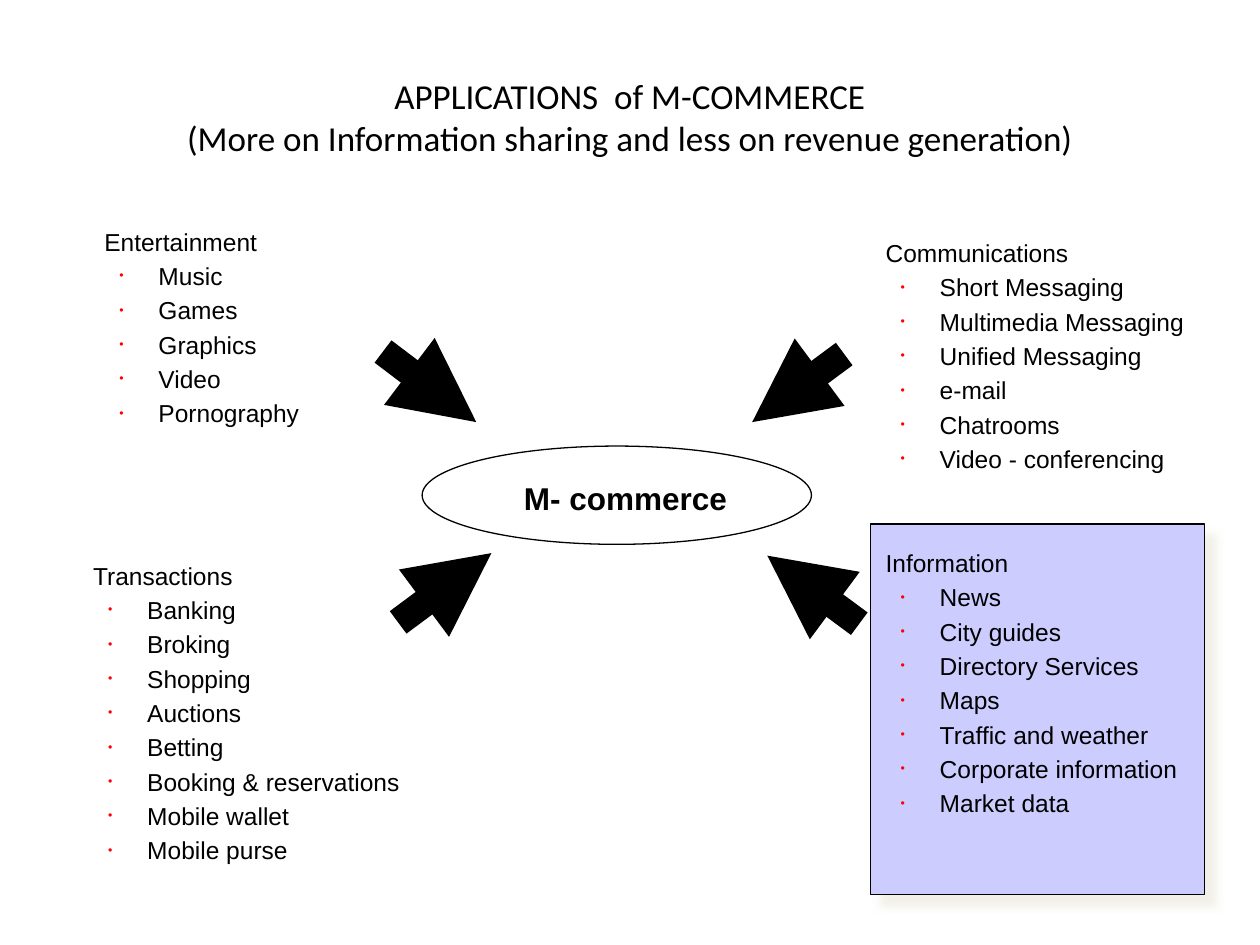
from lxml.etree import SubElement
from pptx import Presentation
from pptx.dml.color import RGBColor
from pptx.enum.shapes import MSO_CONNECTOR as Line, MSO_SHAPE as Shape
from pptx.enum.text import MSO_ANCHOR as Anchor, PP_ALIGN as Align
from pptx.oxml.ns import qn
from pptx.util import Inches, Pt

BLACK = RGBColor(0x00, 0x00, 0x00)
RED = RGBColor(0xFF, 0x00, 0x00)
LILAC = RGBColor(0xCC, 0xCC, 0xFF)
CREAM = RGBColor(0xEE, 0xEC, 0xE1)

TITLE = "APPLICATIONS  of M-COMMERCE\v(More on Information sharing and less on revenue generation)"
LISTS = [
    (0.35, 1.75, 2.56, "Entertainment",
     ["Music", "Games", "Graphics", "Video", "Pornography"]),
    (6.55, 1.84, 3.45, "Communications",
     ["Short Messaging", "Multimedia Messaging", "Unified Messaging",
      "e-mail", "Chatrooms", "Video - conferencing"]),
    (0.26, 4.4, 3.11, "Transactions",
     ["Banking", "Broking", "Shopping", "Auctions", "Betting",
      "Booking & reservations", "Mobile wallet", "Mobile purse"]),
    (6.55, 4.3, 3.45, "Information",
     ["News", "City guides", "Directory Services", "Maps",
      "Traffic and weather", "Corporate information", "Market data"]),
]
ARROWS = [
    (3.04, 2.79, 3.78, 3.35),
    (6.7, 2.81, 5.97, 3.35),
    (3.16, 4.94, 3.9, 4.39),
    (6.82, 4.95, 6.09, 4.41),
]


def add_node(parent, tag, **attrs):
    """Append a DrawingML element and return it."""
    return SubElement(parent, qn(f"a:{tag}"), {k: str(v) for k, v in attrs.items()})


def set_font(para, size, name="Arial", bold=False):
    """Give a paragraph its black font."""
    font = para.font
    font.size, font.name, font.bold = Pt(size), name, bold
    font.color.rgb = BLACK


def add_title(slide):
    """Fill and place the title."""
    title = slide.shapes.title
    title.left, title.top = Inches(0.5), Inches(0.3)
    title.width, title.height = Inches(9), Inches(1.25)
    frame = title.text_frame
    frame.vertical_anchor = Anchor.MIDDLE
    para = frame.paragraphs[0]
    para.text = TITLE
    para.alignment = Align.CENTER
    set_font(para, 20, "Calibri")


def add_form(shapes, kind, *box):
    """Add an unfilled shape with a thin black outline."""
    form = shapes.add_shape(kind, *map(Inches, box))
    form.shadow.inherit = False
    form.fill.background()
    form.line.color.rgb = BLACK
    form.line.width = Pt(0.75)
    return form


def add_panel(slide):
    """Add the lilac panel with its soft shadow."""
    panel = add_form(slide.shapes, Shape.RECTANGLE, 6.91, 4.16, 2.65, 2.94)
    panel.fill.solid()
    panel.fill.fore_color.rgb = LILAC
    effects = panel._element.spPr.find(qn("a:effectLst"))
    shade = add_node(effects, "outerShdw", blurRad=Pt(5), dist=Pt(8.5),
                     dir=45 * 60000, algn="ctr", rotWithShape=0)
    add_node(add_node(shade, "srgbClr", val=CREAM), "alpha", val=75000)


def add_arrow(shapes, *ends):
    """Add a thick arrow from the first point to the second."""
    arrow = shapes.add_connector(Line.STRAIGHT, *map(Inches, ends))
    arrow.line.color.rgb = BLACK
    arrow.line.width = Pt(16)
    add_node(arrow.line._get_or_add_ln(), "tailEnd", type="triangle")
    add_node(arrow._element.spPr, "effectLst")


def add_hub(slide):
    """Group the central ellipse, its label and the arrows."""
    shapes = slide.shapes.add_group_shape().shapes
    add_form(shapes, Shape.OVAL, 3.35, 3.54, 3.09, 0.78)
    label = shapes.add_textbox(*map(Inches, (4.06, 3.75, 1.81, 0.4)))
    label.text_frame.word_wrap = False
    para = label.text_frame.paragraphs[0]
    para.text = "M- commerce"
    set_font(para, 18, bold=True)
    for ends in ARROWS:
        add_arrow(shapes, *ends)


def set_para(para, text, left, hang=0):
    """Write a list line, with a red bullet where it hangs."""
    para.text = text
    props = para._p.get_or_add_pPr()
    props.set("marL", str(Inches(left)))
    props.set("indent", str(Inches(-hang)))
    add_node(add_node(props, "spcBef"), "spcPct", val=20000)
    if hang:
        para.level = 1
        add_node(add_node(props, "buClr"), "srgbClr", val=RED)
        add_node(props, "buSzPct", val=50000)
        add_node(props, "buFont", typeface="Arial")
        add_node(props, "buChar", char="•")
    set_font(para, 14)


def add_list(slide, left, top, width, head, items):
    """Add a heading with its bulleted items."""
    box = slide.shapes.add_textbox(*map(Inches, (left, top, width, 1.5)))
    frame = box.text_frame
    frame.word_wrap = True
    set_para(frame.paragraphs[0], head, 0.38)
    for item in items:
        set_para(frame.add_paragraph(), item, 0.81, 0.31)


def main():
    """Build the slide and save it."""
    deck = Presentation()
    deck.slide_width, deck.slide_height = Inches(10), Inches(7.5)
    slide = deck.slides.add_slide(deck.slide_layouts[5])
    add_title(slide)
    add_panel(slide)
    add_hub(slide)
    for entry in LISTS:
        add_list(slide, *entry)
    deck.save("out.pptx")


if __name__ == "__main__":
    main()
